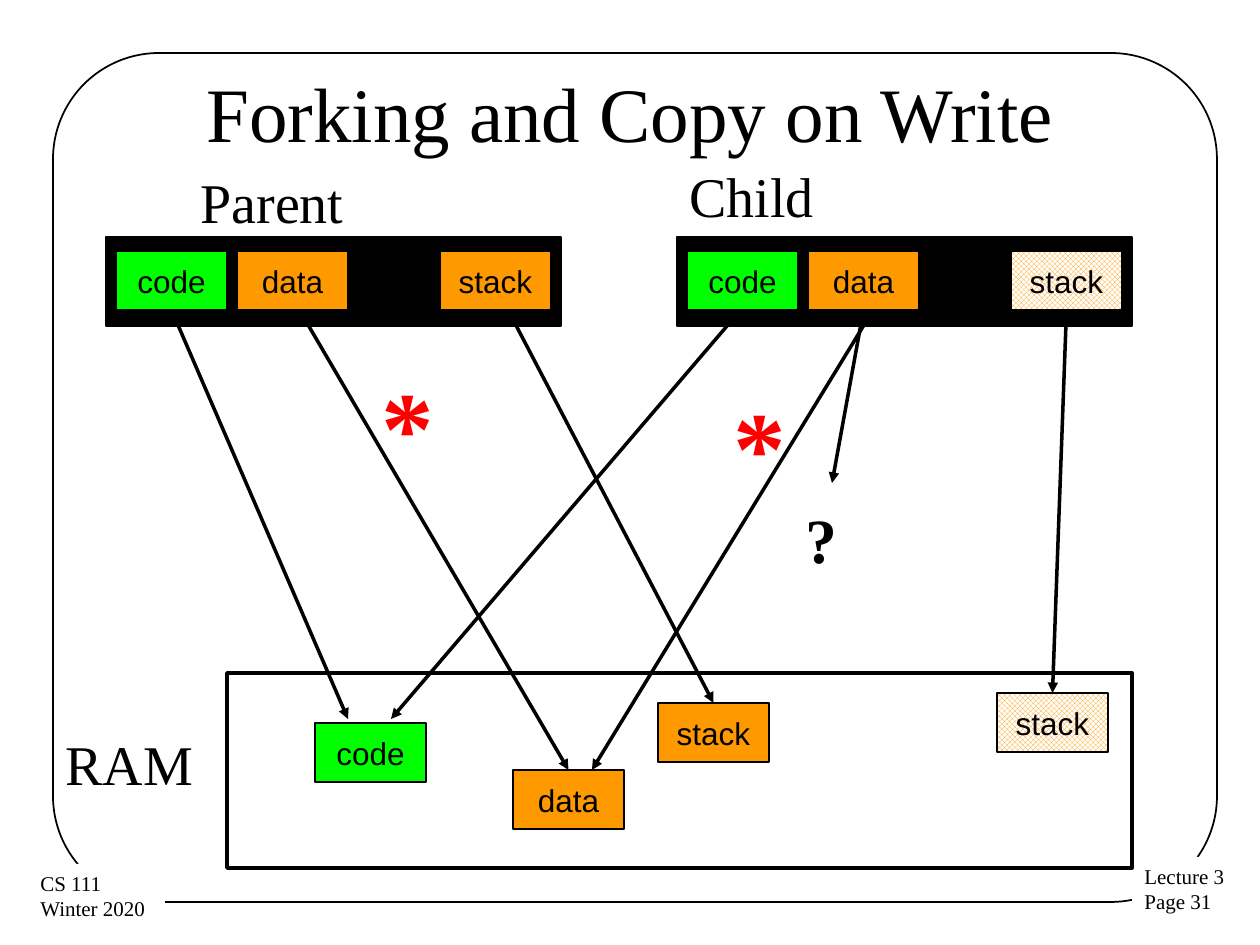
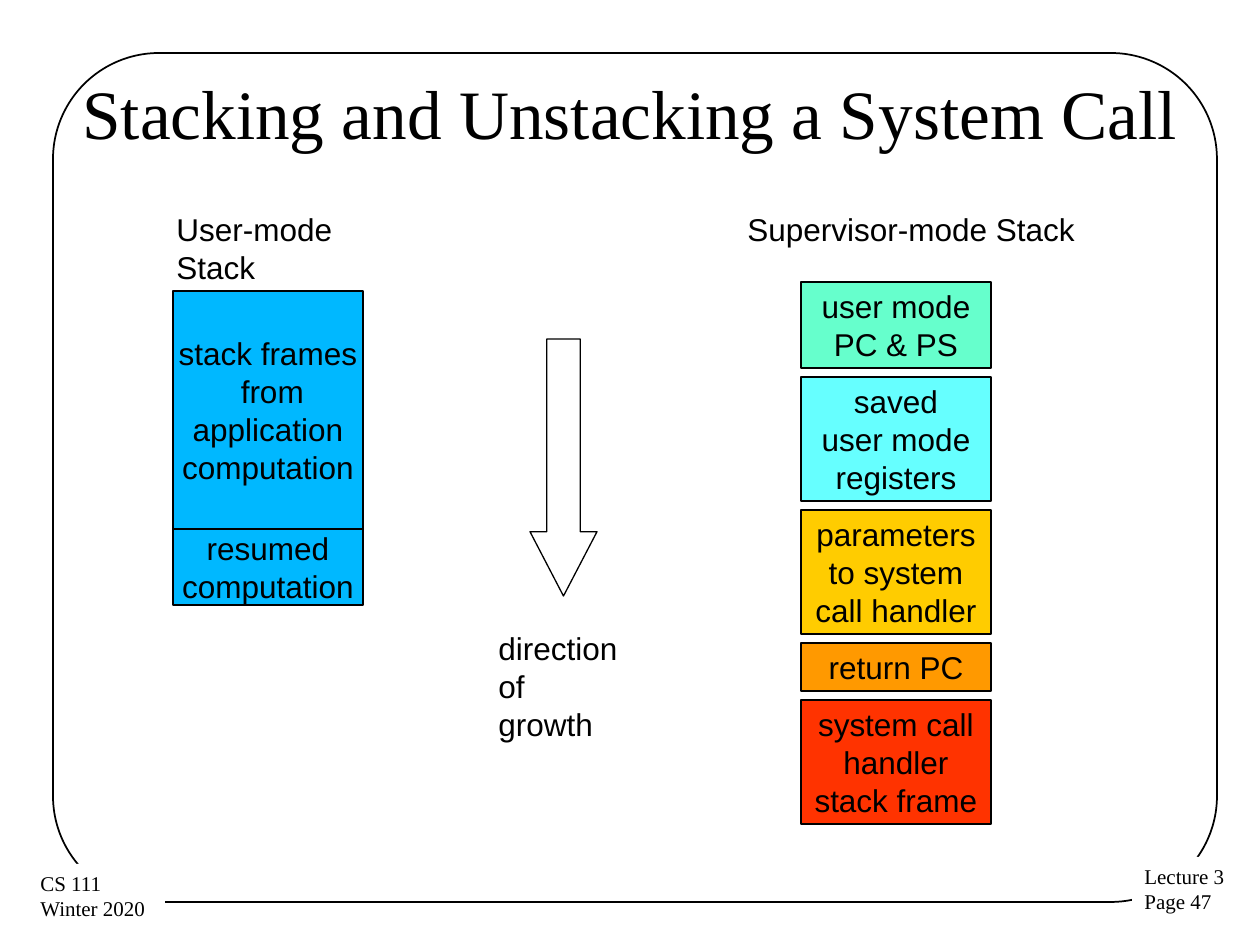
import dataclasses

import lxml.etree
import pptx
import pptx.dml.color
import pptx.enum.dml
import pptx.enum.shapes
import pptx.enum.text
import pptx.oxml.ns
import pptx.util

SHAPE = pptx.enum.shapes.MSO_SHAPE
ALIGN = pptx.enum.text.PP_ALIGN
PX_PER_INCH = 126


@dataclasses.dataclass(frozen=True)
class Theme:
    serif: str = "Times New Roman"
    sans: str = "Arial"
    black: str = "000000"
    white: str = "FFFFFF"
    red: str = "FF0000"
    green: str = "00FF00"
    orange: str = "FF9900"
    blue: str = "00B8FF"
    mint: str = "66FFCC"
    cyan: str = "66FFFF"
    yellow: str = "FFCC00"
    vermilion: str = "FF3300"
    footer_size: float = 12
    body_size: float = 18
    label_size: float = 32
    question_size: float = 36
    star_size: float = 60
    thin: float = 0.75
    frame: float = 1
    thick: float = 2


THEME = Theme()
TRELLIS = "trellis"

# ---- Content: shared frame (boxes are left, top, width, height in px) ----
FRAME_BOX = (53, 53, 1164, 849)
TITLE_BOX = (63, 33, 1134, 157)
COURSE = ("CS 111\nWinter 2020", (28, 864, 137, 64))
PAGE_BOX = (1132, 857, 107, 64)
PAGE_TEXT = "Lecture 3\nPage {}"

# ---- Content: forking slide ----
FORK_TITLE, FORK_TITLE_SIZE, FORK_PAGE = "Forking and Copy on Write", 44, 31
SEGMENT_SIZE = (111, 59)
SEGMENT_OFFSETS = {"code": 10, "data": 131, "stack": 334}
SEGMENT_TOP = 251
PROCESS_TOP, PROCESS_SIZE = 237, (455, 89)
PROCESSES = [
    ("parent", 106, (THEME.green, THEME.orange, THEME.orange)),
    ("child", 677, (THEME.green, THEME.orange, TRELLIS)),
]
RAM_BOX = (227, 673, 905, 195)
RAM_SEGMENTS = [
    ("ram code", "code", 315, 723, THEME.green),
    ("ram data", "data", 513, 770, THEME.orange),
    ("ram child stack", "stack", 997, 693, TRELLIS),
    ("ram stack", "stack", 658, 703, THEME.orange),
]
# An arrow end is either a segment name or a point
POINTERS = [
    ("parent code", (348, 719)),
    ((739, 312), (391, 719)),
    ((508, 310), "ram stack"),
    ("child stack", "ram child stack"),
    ((300, 311), "ram data"),
    ("child data", (832, 483)),
    ((864, 325), (592, 770)),
]
FORK_LABELS = [
    ("Parent", (188, 161, 170, 81)),
    ("Child", (677, 155, 151, 81)),
    ("RAM", (53, 723, 155, 81)),
]
FORK_MARKS = [
    ("?", (793, 494, 57, 89), THEME.question_size, THEME.black),
    ("*", (721, 374, 78, 140), THEME.star_size, THEME.red),
    ("*", (369, 354, 78, 140), THEME.star_size, THEME.red),
]

# ---- Content: system call slide ----
CALL_TITLE, CALL_TITLE_SIZE, CALL_PAGE = "Stacking and Unstacking a System Call", 39.6, 47
CALL_LABELS = [
    ("User-mode Stack", (164, 204, 268, 49)),
    ("Supervisor-mode Stack", (735, 204, 353, 49)),
    ("direction\nof growth", (486, 623, 154, 88)),
]
GROWTH_BOX, GROWTH_ADJUSTMENTS = (530, 339, 67, 257), (0.5, 0.96)
FRAME_WIDTH = 190
# Each stack: left, top, gap, then frames of text, height and colour
STACKS = [
    (173, 291, 0, [
        ("stack frames\n from\napplication\ncomputation", 238, THEME.blue),
        ("resumed\ncomputation", 76, THEME.blue),
    ]),
    (801, 282, 9, [
        ("user mode\nPC & PS", 86, THEME.mint),
        ("saved\nuser mode\nregisters", 124, THEME.cyan),
        ("parameters\nto system\ncall handler", 124, THEME.yellow),
        ("return PC", 48, THEME.orange),
        ("system call\nhandler\nstack frame", 124, THEME.vermilion),
    ]),
]


# ---- Helpers ----
def emu(*lengths):
    return [pptx.util.Emu(round(px * 914400 / PX_PER_INCH)) for px in lengths]


def rgb(color):
    return pptx.dml.color.RGBColor.from_string(color)


def write(shape, text, size, font=THEME.sans, color=THEME.black,
          bold=False, align=ALIGN.LEFT):
    text_frame = shape.text_frame
    text_frame.text = text
    for paragraph in text_frame.paragraphs:
        paragraph.alignment = align
        paragraph.font.name = font
        paragraph.font.size = pptx.util.Pt(size)
        paragraph.font.bold = bold
        paragraph.font.color.rgb = rgb(color)


def paint(fill, color):
    if color is None:
        fill.background()
    elif color == TRELLIS:
        fill.patterned()
        fill.pattern = pptx.enum.dml.MSO_PATTERN.TRELLIS
        fill.fore_color.rgb = rgb(THEME.orange)
        fill.back_color.rgb = rgb(THEME.white)
    else:
        fill.solid()
        fill.fore_color.rgb = rgb(color)


def add_shape(shapes, box, color=None, line_width=THEME.thin, kind=SHAPE.RECTANGLE):
    shape = shapes.add_shape(kind, *emu(*box))
    shape.shadow.inherit = False
    paint(shape.fill, color)
    shape.line.color.rgb = rgb(THEME.black)
    shape.line.width = pptx.util.Pt(line_width)
    return shape


def add_block(shapes, text, box, color):
    block = add_shape(shapes, box, color)
    block.text_frame.word_wrap = False
    block.text_frame.vertical_anchor = pptx.enum.text.MSO_ANCHOR.MIDDLE
    write(block, text, THEME.body_size, align=ALIGN.CENTER)
    return block


def add_label(slide, text, box, size, **style):
    label = slide.shapes.add_textbox(*emu(*box))
    label.text_frame.word_wrap = False
    label.text_frame.auto_size = pptx.enum.text.MSO_AUTO_SIZE.SHAPE_TO_FIT_TEXT
    write(label, text, size, **style)
    return label


def add_pointer(slide, start, end, segments):
    points = [(0, 0) if isinstance(place, str) else place for place in (start, end)]
    connector = slide.shapes.add_connector(
        pptx.enum.shapes.MSO_CONNECTOR.STRAIGHT, *emu(*points[0], *points[1]))
    if isinstance(start, str):
        connector.begin_connect(segments[start], 2)
    if isinstance(end, str):
        connector.end_connect(segments[end], 0)
    connector.line.color.rgb = rgb(THEME.black)
    connector.line.width = pptx.util.Pt(THEME.thick)
    qn = pptx.oxml.ns.qn
    lxml.etree.SubElement(connector.line._get_or_add_ln(), qn("a:tailEnd"), type="triangle")
    lxml.etree.SubElement(connector._element.spPr, qn("a:effectLst"))


def add_slide(presentation, title_text, title_size, page):
    slide = presentation.slides.add_slide(presentation.slide_layouts[5])
    # Rounded frame, interrupted by the two white footers
    frame = add_shape(slide.shapes, FRAME_BOX, line_width=THEME.frame,
                      kind=SHAPE.ROUNDED_RECTANGLE)
    frame.adjustments[0] = 0.125
    for text, box in [(PAGE_TEXT.format(page), PAGE_BOX), COURSE]:
        footer = add_label(slide, text, box, THEME.footer_size, font=THEME.serif)
        paint(footer.fill, THEME.white)
    # Title
    title = slide.shapes.title
    title.left, title.top, title.width, title.height = emu(*TITLE_BOX)
    title.text_frame.auto_size = pptx.enum.text.MSO_AUTO_SIZE.NONE
    title.text_frame.vertical_anchor = pptx.enum.text.MSO_ANCHOR.MIDDLE
    write(title, title_text, title_size, THEME.serif, align=ALIGN.CENTER)
    return slide


# ---- Slides ----
def build_fork_slide(presentation):
    slide = add_slide(presentation, FORK_TITLE, FORK_TITLE_SIZE, FORK_PAGE)
    segments = {}
    # Address spaces of the two processes
    for process, left, colors in PROCESSES:
        group = slide.shapes.add_group_shape()
        add_shape(group.shapes, (left, PROCESS_TOP, *PROCESS_SIZE), THEME.black)
        for (name, offset), color in zip(SEGMENT_OFFSETS.items(), colors):
            box = (left + offset, SEGMENT_TOP, *SEGMENT_SIZE)
            segments[f"{process} {name}"] = add_block(group.shapes, name, box, color)
    # Memory
    add_shape(slide.shapes, RAM_BOX, line_width=THEME.thick)
    for key, name, left, top, color in RAM_SEGMENTS:
        segments[key] = add_block(slide.shapes, name, (left, top, *SEGMENT_SIZE), color)
    # Pointers and labels
    for start, end in POINTERS:
        add_pointer(slide, start, end, segments)
    for text, box in FORK_LABELS:
        add_label(slide, text, box, THEME.label_size, font=THEME.serif)
    for text, box, size, color in FORK_MARKS:
        add_label(slide, text, box, size, font=THEME.serif, color=color, bold=True)


def build_call_slide(presentation):
    slide = add_slide(presentation, CALL_TITLE, CALL_TITLE_SIZE, CALL_PAGE)
    # Labels and direction of growth
    for text, box in CALL_LABELS:
        add_label(slide, text, box, THEME.body_size)
    arrow = add_shape(slide.shapes, GROWTH_BOX, kind=SHAPE.DOWN_ARROW)
    for index, adjustment in enumerate(GROWTH_ADJUSTMENTS):
        arrow.adjustments[index] = adjustment
    # Stacks, filled from the top down
    for left, top, gap, frames in STACKS:
        for text, height, color in frames:
            add_block(slide.shapes, text, (left, top, FRAME_WIDTH, height), color)
            top += height + gap


def main():
    presentation = pptx.Presentation()
    presentation.slide_width, presentation.slide_height = emu(1260, 945)
    build_fork_slide(presentation)
    build_call_slide(presentation)
    presentation.save("out.pptx")


if __name__ == "__main__":
    main()
